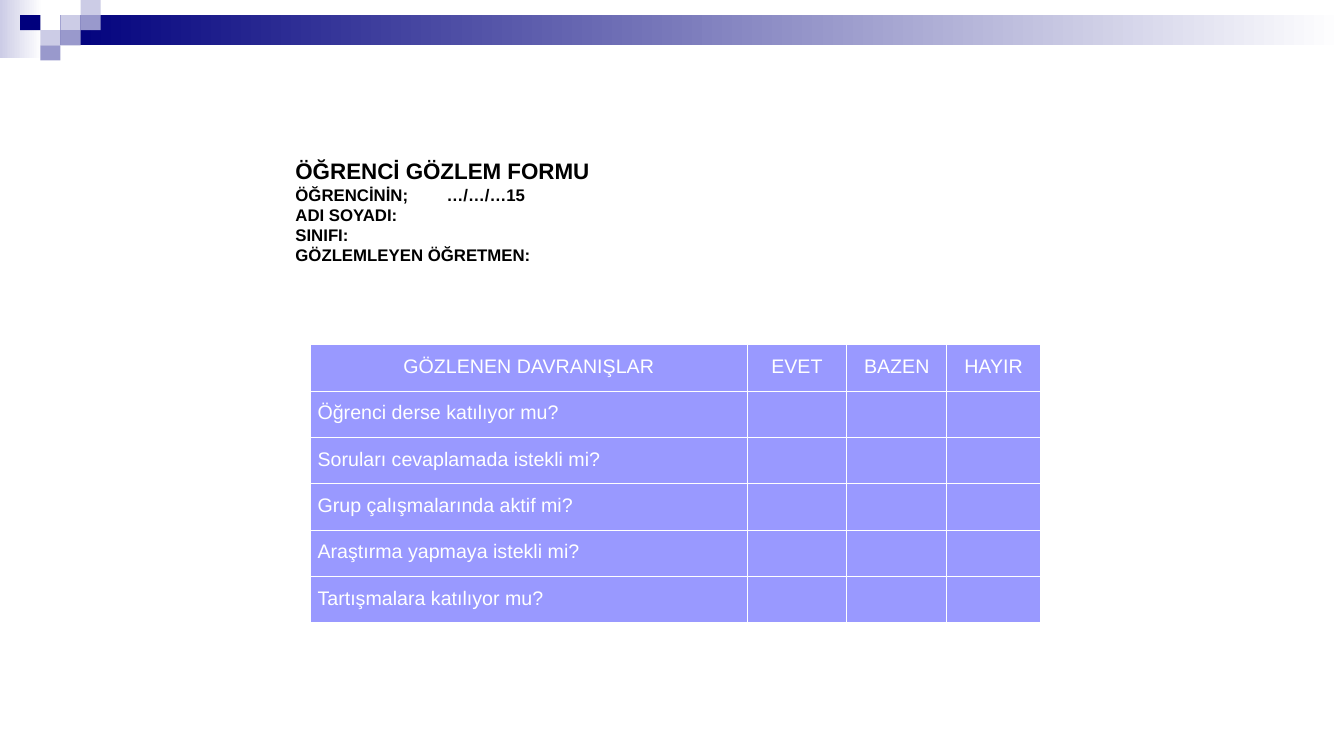
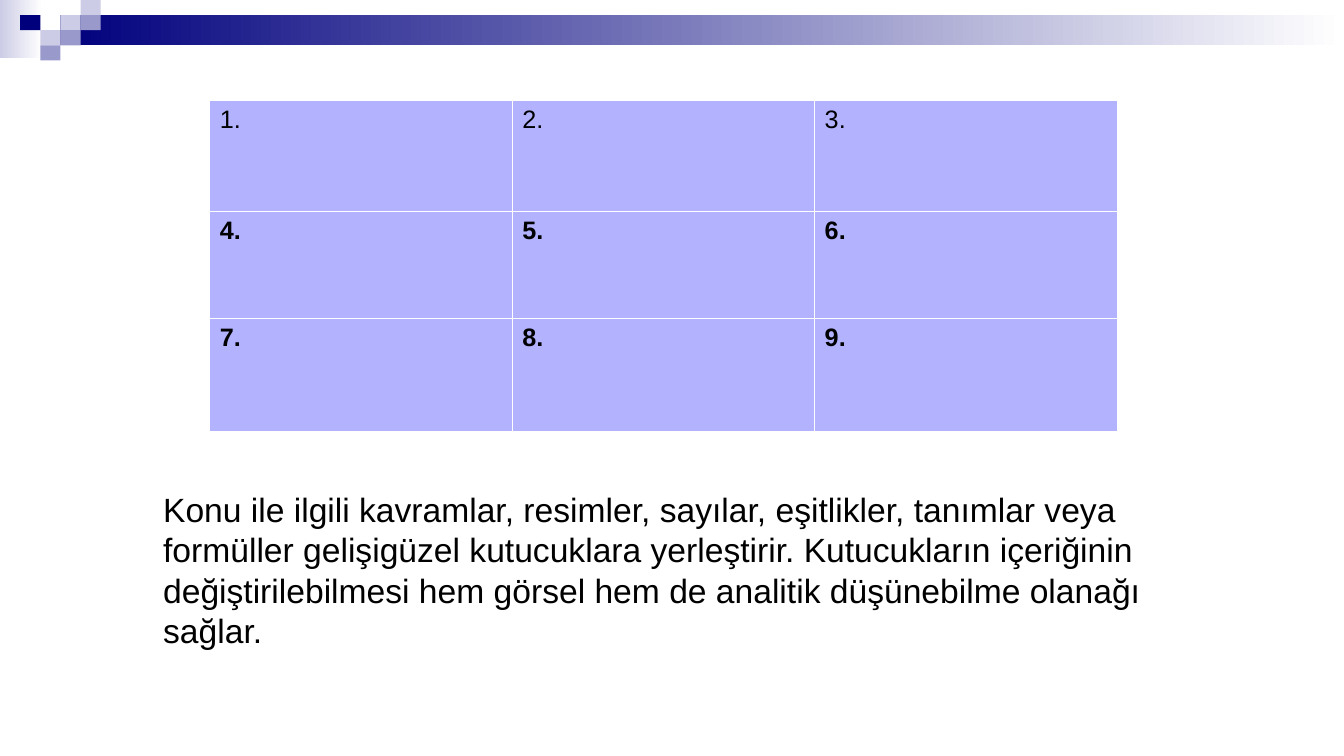
import pptx
import pptx.util
import pptx.dml.color
import pptx.enum.shapes
import pptx.enum.text
import pptx.oxml.ns
import lxml.etree

EMU_PER_PX = 9144
FONT = "Arial"
COLORS = {
    "ink": "000000",
    "paper": "FFFFFF",
    "navy": "00007D",
    "mid": "9999CC",
    "pale": "CCCCE6",
    "form": "9999FF",
    "grid": "B2B2FF",
}
Align = pptx.enum.text.PP_ALIGN
Anchor = pptx.enum.text.MSO_ANCHOR
qn = pptx.oxml.ns.qn


def px(length):
    return pptx.util.Emu(length * EMU_PER_PX)


def rgb(color):
    return pptx.dml.color.RGBColor.from_string(COLORS[color])


def assign(target, values):
    for attribute, value in values.items():
        setattr(target, attribute, value)


class Deck:
    def __init__(self, width, height):
        self.prs = pptx.Presentation()
        assign(self.prs, {"slide_width": px(width), "slide_height": px(height)})
        self.slide = None

    def new_slide(self, layout):
        first = self.slide is None
        self.slide = self.prs.slides.add_slide(self.prs.slide_layouts[layout])
        if first:
            self.decorate_master()

    def decorate_master(self):
        self.master_block((0, 0, 42, 58), "pale", "paper")
        self.master_block((60, 15, 1273, 30), "navy", "paper")
        mosaic = [(3, 1, "pale"), (4, 0, "pale"), (4, 1, "mid"), (2, 2, "pale"),
                  (1, 1, "navy"), (3, 2, "mid"), (2, 3, "mid")]
        for column, row, color in mosaic:
            self.master_block((column * 20, row * 15, 20, 15), color)

    def master_block(self, box, color, fade_to=None):
        block = self.slide.shapes.add_shape(
            pptx.enum.shapes.MSO_SHAPE.RECTANGLE, *map(px, box))
        block.shadow.inherit = False
        block.line.fill.background()
        if fade_to:
            block.fill.gradient()
            block.fill.gradient_angle = 0
            for stop, shade in zip(block.fill.gradient_stops, (color, fade_to)):
                stop.color.rgb = rgb(shade)
        else:
            block.fill.solid()
            block.fill.fore_color.rgb = rgb(color)
        tree = self.prs.slide_master.shapes.element
        block.element.nvSpPr.cNvPr.set("id", str(100 + len(tree)))
        tree.append(block.element)

    def style(self, paragraph, size, color="ink", bold=False, align=Align.LEFT, spacing=1.0):
        assign(paragraph, {"alignment": align, "line_spacing": spacing,
                           "space_before": pptx.util.Pt(0)})
        assign(paragraph.font, {"name": FONT, "size": pptx.util.Pt(size), "bold": bold})
        paragraph.font.color.rgb = rgb(color)

    def fill_frame(self, holder, box, lines, size, bold=False, tab=None,
                   anchor=Anchor.TOP, inset=0):
        assign(holder, dict(zip(("left", "top", "width", "height"), map(px, box))))
        frame = holder.text_frame
        assign(frame, {"word_wrap": True, "auto_size": pptx.enum.text.MSO_AUTO_SIZE.NONE,
                       "vertical_anchor": anchor, "margin_left": px(10),
                       "margin_right": px(10), "margin_top": px(inset),
                       "margin_bottom": px(inset)})
        frame.text = "\n".join(lines)
        for paragraph in frame.paragraphs:
            properties = paragraph._p.get_or_add_pPr()
            properties.set("marL", "0")
            properties.set("indent", "0")
            lxml.etree.SubElement(properties, qn("a:buNone"))
            if tab:
                stops = lxml.etree.SubElement(properties, qn("a:tabLst"))
                lxml.etree.SubElement(stops, qn("a:tab"), pos=str(px(tab)), algn="l")
            self.style(paragraph, size, bold=bold)

    def title(self, text, box, size):
        self.fill_frame(self.slide.shapes.title, box, [text], size, bold=True,
                        anchor=Anchor.BOTTOM)

    def body(self, lines, box, size, tab):
        self.fill_frame(self.slide.placeholders[1], box, lines, size, bold=True, tab=tab)

    def text(self, text, box, size):
        holder = self.slide.shapes.add_textbox(*map(px, box))
        self.fill_frame(holder, box, [text], size, inset=5)

    def table(self, rows, left, top, widths, heights, fill, margins, text_format):
        table = self.slide.shapes.add_table(
            len(rows), len(widths), px(left), px(top),
            px(sum(widths)), px(sum(heights))).table
        assign(table, {"first_row": False, "horz_banding": False})
        for column, width in zip(table.columns, widths):
            column.width = px(width)
        for row, height in zip(table.rows, heights):
            row.height = px(height)
        for r, texts in enumerate(rows):
            for c, text in enumerate(texts):
                cell = table.cell(r, c)
                self.cell_box(cell, fill, *margins)
                if text:
                    cell.text = text
                    self.style(cell.text_frame.paragraphs[0], **text_format(r))

    def cell_box(self, cell, fill, side, edge):
        assign(cell, {"margin_left": px(side), "margin_right": px(side),
                      "margin_top": px(edge), "margin_bottom": px(edge),
                      "vertical_anchor": Anchor.TOP})
        properties = cell._tc.get_or_add_tcPr()
        for border in ("a:lnL", "a:lnR", "a:lnT", "a:lnB"):
            line = lxml.etree.SubElement(properties, qn(border), w=str(pptx.util.Pt(1)))
            paint = lxml.etree.SubElement(line, qn("a:solidFill"))
            lxml.etree.SubElement(paint, qn("a:srgbClr"), val=COLORS["paper"])
        cell.fill.solid()
        cell.fill.fore_color.rgb = rgb(fill)


def observation_form(deck):
    deck.new_slide(1)
    deck.title("ÖĞRENCİ GÖZLEM FORMU", (283, 155, 800, 28), 16)
    deck.body(["ÖĞRENCİNİN;\t…/…/…15", "ADI SOYADI:", "SINIFI:", "GÖZLEMLEYEN ÖĞRETMEN:"],
              (283, 183, 800, 85), 12, tab=597)
    questions = ["Öğrenci derse katılıyor mu?", "Soruları cevaplamada istekli mi?",
                 "Grup çalışmalarında aktif mi?", "Araştırma yapmaya istekli mi?",
                 "Tartışmalara katılıyor mu?"]
    rows = [["GÖZLENEN DAVRANIŞLAR", "EVET", "BAZEN", "HAYIR"]]
    rows += [[question, "", "", ""] for question in questions]
    deck.table(rows, 308, 342, [433, 99, 99, 93], [46] * len(rows), "form", (7, 0),
               lambda row: {"size": 14, "color": "paper", "spacing": 1.5,
                            "align": Align.LEFT if row else Align.CENTER})


def numbered_grid(deck):
    deck.new_slide(6)
    rows = [[f"{3 * row + column}." for column in (1, 2, 3)] for row in range(3)]
    deck.table(rows, 208, 100, [300] * 3, [110, 106, 112], "grid", (10, 5),
               lambda row: {"size": 18, "bold": row > 0})
    deck.text("Konu ile ilgili kavramlar, resimler, sayılar, eşitlikler, tanımlar veya "
              "formüller gelişigüzel kutucuklara yerleştirir. Kutucukların içeriğinin "
              "değiştirilebilmesi hem görsel hem de analitik düşünebilme olanağı sağlar.",
              (152, 480, 1067, 172), 24)


def main():
    deck = Deck(1333, 750)
    observation_form(deck)
    numbered_grid(deck)
    deck.prs.save("out.pptx")


if __name__ == "__main__":
    main()
